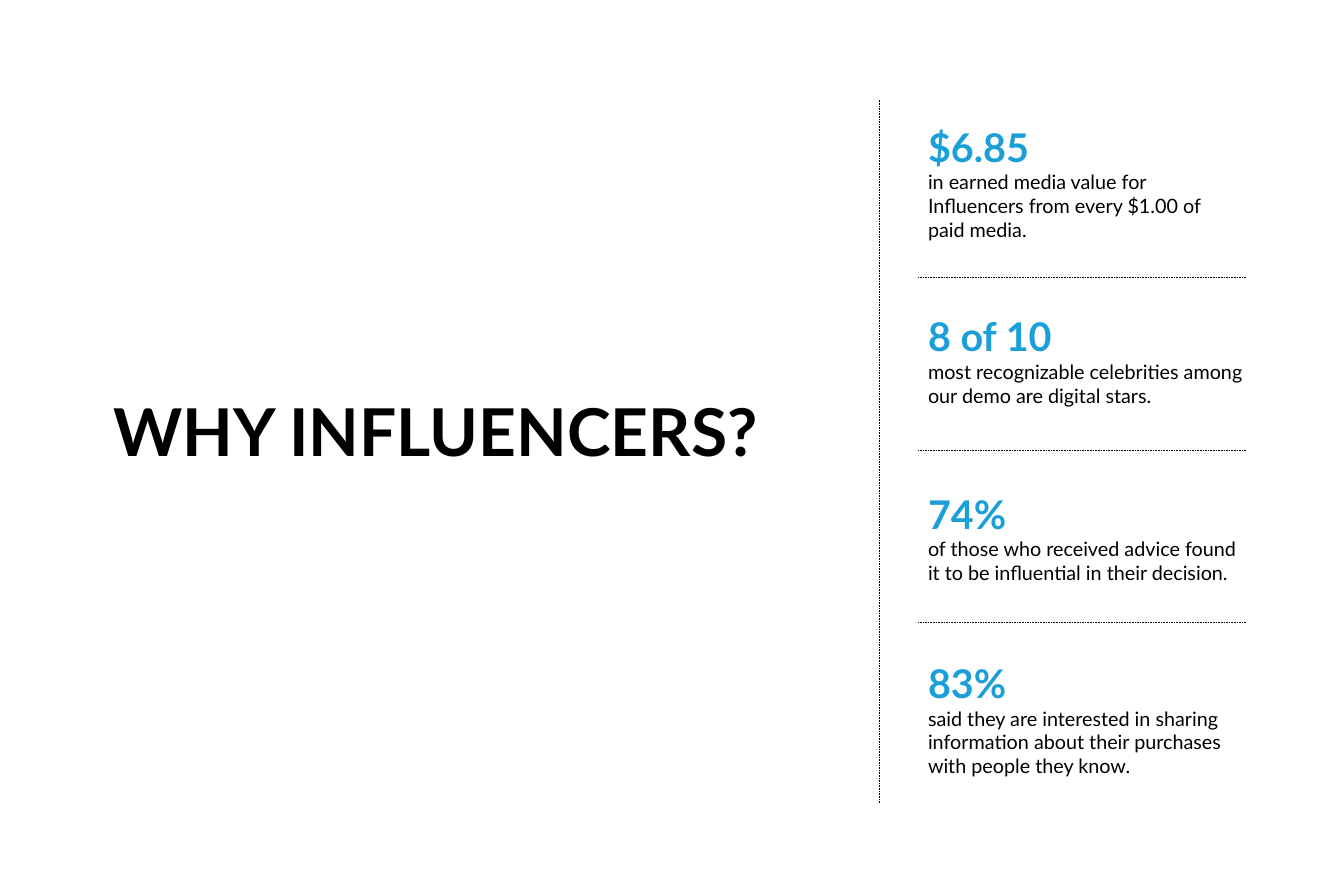
from pptx import Presentation
from pptx.dml.color import RGBColor
from pptx.enum.dml import MSO_LINE
from pptx.enum.shapes import MSO_CONNECTOR
from pptx.enum.text import MSO_ANCHOR as Anchor, MSO_AUTO_SIZE as AutoSize, PP_ALIGN as Align
from pptx.oxml.ns import qn
from pptx.util import Inches, Pt
from lxml.etree import SubElement

COLORS = {"text": "000000", "accent": "1B9FD9", "background": "FFFFFF"}
FONT = "Lato"


def write(para, text, size=18, color="text", bold=False, align=Align.LEFT):
    para.alignment = align
    span = para.add_run()
    span.text = text
    span.font.name = FONT
    span.font.size = Pt(size)
    span.font.bold = bold
    span.font.color.rgb = RGBColor.from_string(COLORS[color])


def prepare(box):
    frame = box.text_frame
    frame.word_wrap = True
    frame.auto_size = AutoSize.NONE
    frame.vertical_anchor = Anchor.TOP
    frame.margin_left = frame.margin_right = Inches(0.1)
    frame.margin_top = frame.margin_bottom = Inches(0.1)
    return frame


deck = Presentation()
deck.slide_width = Inches(17)
deck.slide_height = Inches(11)
page = deck.slides.add_slide(deck.slide_layouts[5])
page.background.fill.solid()
page.background.fill.fore_color.rgb = RGBColor.from_string(COLORS["background"])

title = page.shapes.title
title.left, title.top = Inches(1.23), Inches(4.84)
title.width, title.height = Inches(8.56), Inches(1.31)
write(prepare(title).paragraphs[0], "WHY INFLUENCERS?", size=60, bold=True, align=Align.CENTER)

dividers = [(11.12, 1.26, 11.12, 10.15)]
dividers += [(15.76, y, 11.61, y) for y in (3.51, 5.7, 7.87)]
for ends in dividers:
    divider = page.shapes.add_connector(MSO_CONNECTOR.STRAIGHT, *map(Inches, ends))
    divider.line.color.rgb = RGBColor.from_string(COLORS["text"])
    divider.line.width = Pt(0.75)
    divider.line.dash_style = MSO_LINE.ROUND_DOT
    SubElement(divider.element.spPr, qn("a:effectLst"))

stats = [
    (1.45, 4, 1.72, "$6.85",
     ["in earned media value for Influencers from every $1.00 of paid media."]),
    (3.85, 4.33, 1.5, "8 of 10",
     ["most recognizable celebrities among our demo are digital stars."]),
    (6.09, 4.33, 1.5, "74%",
     ["of those who received advice found", "it to be influential in their decision."]),
    (8.23, 4.33, 1.5, "83%",
     ["said they are interested in sharing information about their purchases with people they know."]),
]
for top, width, height, figure, details in stats:
    box = page.shapes.add_textbox(Inches(11.64), Inches(top), Inches(width), Inches(height))
    frame = prepare(box)
    write(frame.paragraphs[0], figure, size=36, color="accent", bold=True)
    for detail in details:
        write(frame.add_paragraph(), detail)

deck.save("out.pptx")
